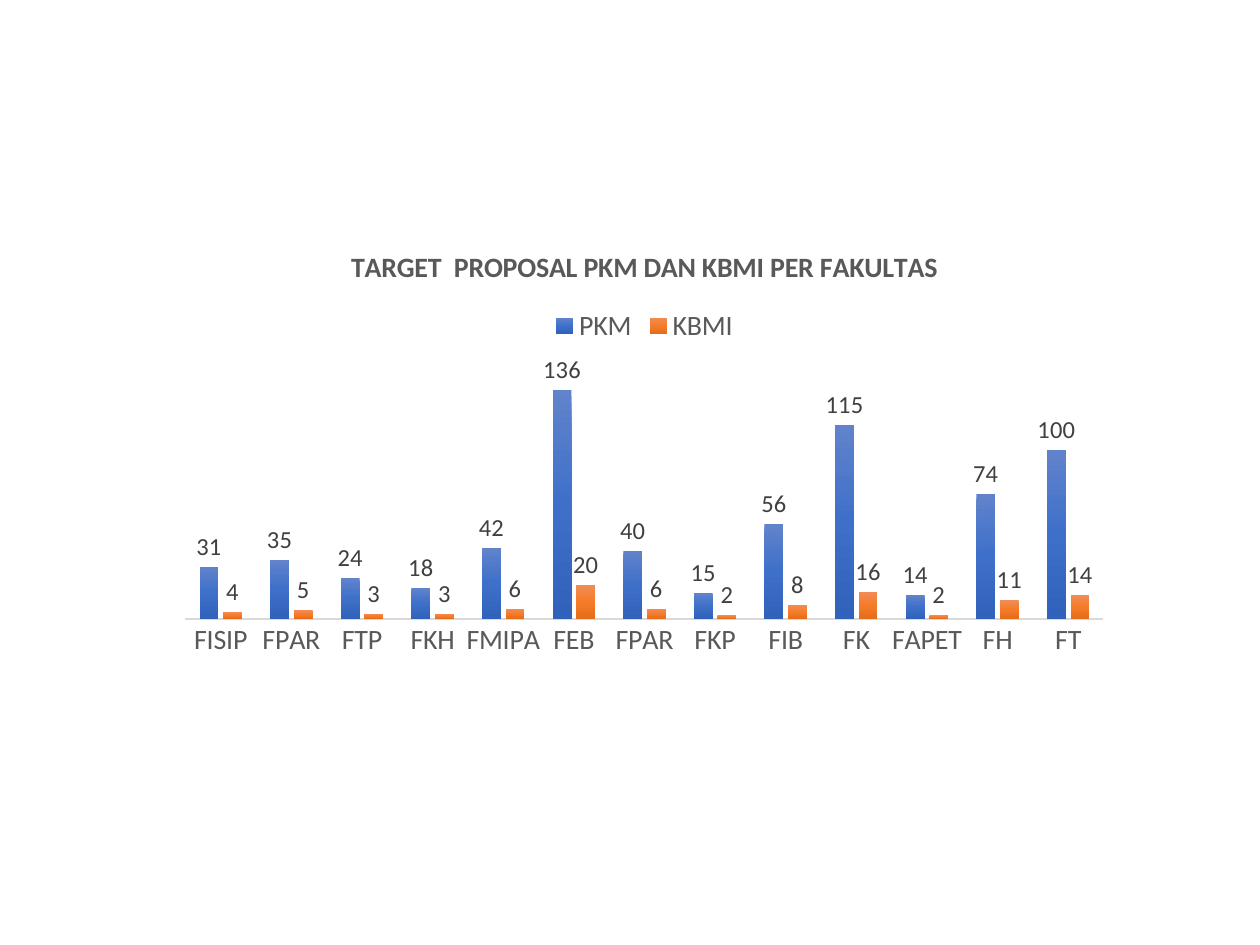
from copy import deepcopy

from lxml.etree import SubElement
from pptx import Presentation
from pptx.chart.data import CategoryChartData
from pptx.dml.color import RGBColor
from pptx.enum.chart import XL_CHART_TYPE, XL_LABEL_POSITION, XL_LEGEND_POSITION, XL_TICK_MARK
from pptx.oxml.ns import qn
from pptx.util import Inches, Pt

COLORS = {"text": "595959", "label": "404040", "axis": "D9D9D9", "base": "000000"}
GRADIENTS = {
    "PKM": ["6183CB", "3E70CA", "3062BB"],
    "KBMI": ["F18C57", "F67B28", "E56C19"],
}
FACULTIES = ["FISIP", "FPAR", "FTP", "FKH", "FMIPA", "FEB", "FPAR",
             "FKP", "FIB", "FK", "FAPET", "FH", "FT"]
TARGETS = {
    "PKM": [31, 35, 24, 18, 42, 136, 40, 15, 56, 115, 14, 74, 100],
    "KBMI": [4, 5, 3, 3, 6, 20, 6, 2, 8, 16, 2, 11, 14],
}


def style_font(font, size, color, bold=False):
    """Set the face, size, colour and weight of a font."""
    font.name = "Calibri"
    font.size = Pt(size)
    font.bold = bold
    font.color.rgb = RGBColor.from_string(COLORS[color])


def fill_gradient(series, shades):
    """Fill the bars of a series from top to bottom with evenly spaced shades."""
    fill = series.format.fill
    fill.gradient()
    fill.gradient_angle = 270
    stop_list = next(series._element.iter(qn("a:gsLst")))
    for _ in shades[len(stop_list):]:
        stop_list.append(deepcopy(stop_list[0]))
    for index, (stop, shade) in enumerate(zip(fill.gradient_stops, shades)):
        stop.position = index / (len(shades) - 1)
        stop.color.rgb = RGBColor.from_string(shade)


def place_plot(chart, left, top, width, height):
    """Fix the inner plot area as fractions of the chart."""
    plot_area = next(chart._chartSpace.iter(qn("c:plotArea")))
    for old_layout in plot_area.findall(qn("c:layout")):
        plot_area.remove(old_layout)
    layout = SubElement(plot_area, qn("c:layout"))
    plot_area.insert(0, layout)
    manual = SubElement(layout, qn("c:manualLayout"))
    settings = {"layoutTarget": "inner", "xMode": "edge", "yMode": "edge",
                "x": left, "y": top, "w": width, "h": height}
    for tag, value in settings.items():
        SubElement(manual, qn(f"c:{tag}")).set("val", str(value))


def add_title(chart, text):
    """Write the bold chart title."""
    paragraph = chart.chart_title.text_frame.paragraphs[0]
    run = paragraph.add_run()
    run.text = text
    style_font(run.font, 16, "text", bold=True)
    chart.chart_title.include_in_layout = False


def style_axes(chart):
    """Show only the faculty axis and hide the value axis."""
    faculty_axis = chart.category_axis
    faculty_axis.major_tick_mark = XL_TICK_MARK.NONE
    faculty_axis.minor_tick_mark = XL_TICK_MARK.NONE
    style_font(faculty_axis.tick_labels.font, 16, "text")
    faculty_axis.format.line.color.rgb = RGBColor.from_string(COLORS["axis"])
    faculty_axis.format.line.width = Pt(1)
    value_axis = chart.value_axis
    value_axis.visible = False
    value_axis.has_major_gridlines = False
    value_axis.minimum_scale = 0
    value_axis.maximum_scale = 160


def add_target_chart(slide, left, top, width, height):
    """Add the column chart of proposal targets per faculty."""
    data = CategoryChartData(number_format="0")
    data.categories = FACULTIES
    for program, values in TARGETS.items():
        data.add_series(program, values)
    chart = slide.shapes.add_chart(
        XL_CHART_TYPE.COLUMN_CLUSTERED, left, top, width, height, data).chart
    style_font(chart.font, 10, "base")
    add_title(chart, "TARGET  PROPOSAL PKM DAN KBMI PER FAKULTAS")

    chart.has_legend = True
    chart.legend.position = XL_LEGEND_POSITION.TOP
    chart.legend.include_in_layout = False
    style_font(chart.legend.font, 16, "text")
    style_axes(chart)

    plot = chart.plots[0]
    plot.gap_width = 150
    plot.overlap = -25
    plot.vary_by_categories = False
    for series in plot.series:
        fill_gradient(series, GRADIENTS[series.name])
        labels = series.data_labels
        labels.show_value = True
        labels.number_format = "0"
        labels.number_format_is_linked = False
        labels.position = XL_LABEL_POSITION.OUTSIDE_END
        style_font(labels.font, 14, "label")
    place_plot(chart, 0.02, 0.25, 0.96, 0.55)


def main():
    """Build and save the slide."""
    presentation = Presentation()
    presentation.slide_width = Inches(10)
    presentation.slide_height = Inches(7.5)
    slide = presentation.slides.add_slide(presentation.slide_layouts[6])
    add_target_chart(slide, Inches(1.32), Inches(1.8), Inches(7.59), Inches(3.89))
    presentation.save("out.pptx")


if __name__ == "__main__":
    main()
